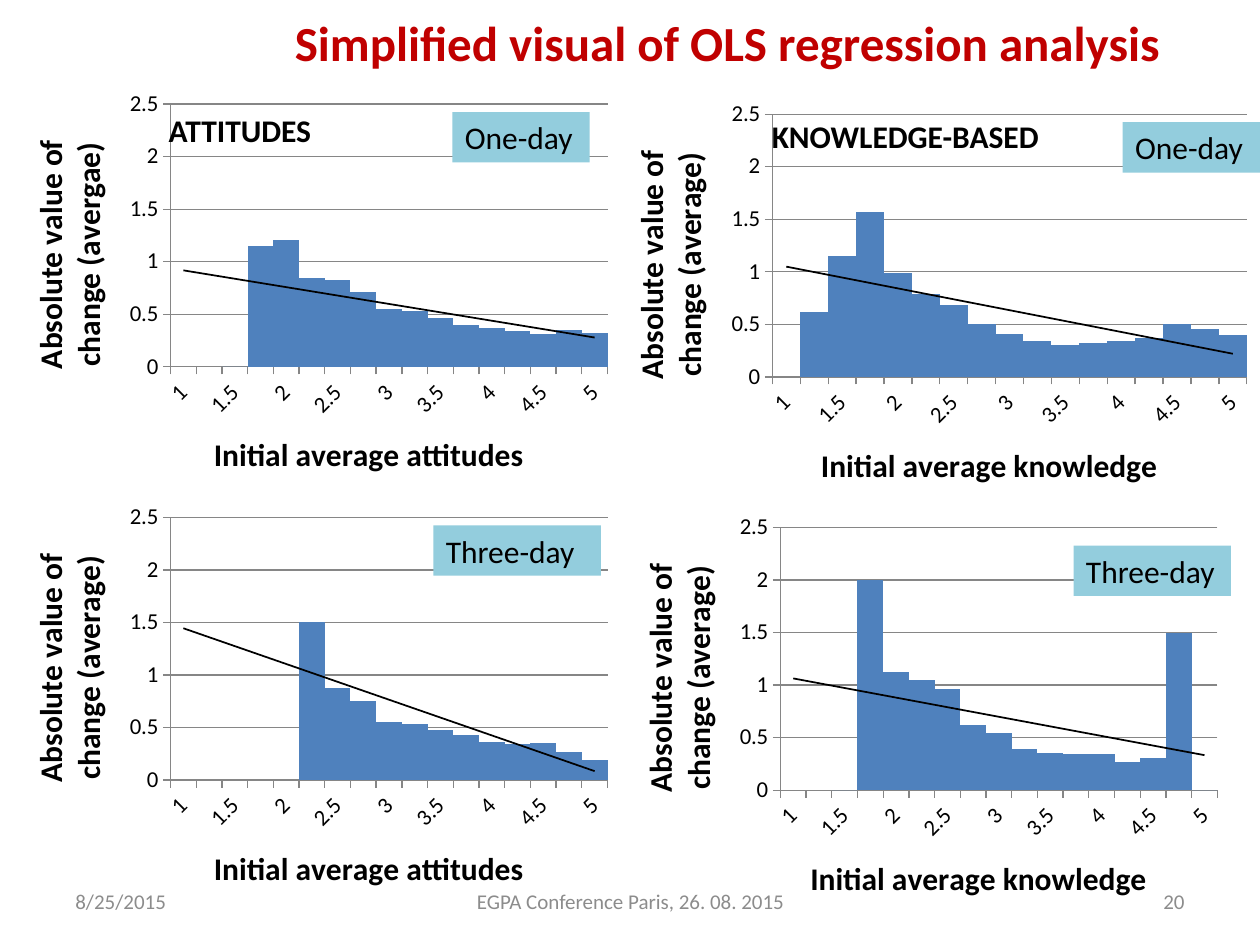
"""Build the slide comparing change by initial score across four trendline charts."""
from typing import NamedTuple, Optional

from lxml.etree import SubElement
from pptx import Presentation
from pptx.chart.data import CategoryChartData
from pptx.dml.color import RGBColor
from pptx.enum.chart import XL_CHART_TYPE, XL_TICK_MARK
from pptx.enum.shapes import MSO_SHAPE
from pptx.enum.text import MSO_ANCHOR, MSO_AUTO_SIZE, PP_ALIGN
from pptx.oxml import parse_xml
from pptx.oxml.ns import nsdecls, qn
from pptx.util import Inches, Pt

FONT = "Calibri"
COLORS = {"title": "C00000", "text": "000000", "bar": "4F81BD", "grid": "868686",
          "tag": "93CDDD", "footer": "8C8C8C"}
SCORES = [f"{1 + step / 4:g}" for step in range(17)]


class Box(NamedTuple):
    left: float
    top: float
    width: float
    height: float

    def emu(self) -> list:
        return [Inches(length) for length in self]


class Panel(NamedTuple):
    box: Box
    subject: str
    average: str
    changes: list
    tag: str
    tag_box: Box


class Label(NamedTuple):
    text: str
    box: Box
    align: Optional[PP_ALIGN]
    size: int = 18
    color: str = "text"
    bold: bool = False


PANELS = [
    Panel(Box(0, 0.65, 4.92, 3.36), "attitudes", "avergae",
          [None, None, 0, 1.15, 1.21, 0.85, 0.83, 0.71, 0.55, 0.53, 0.46, 0.4,
           0.37, 0.34, 0.31, 0.35, 0.32], "One-day", Box(3.59, 0.89, 1.09, 0.4)),
    Panel(Box(4.77, 0.73, 5.23, 3.36), "knowledge", "average",
          [None, 0.62, 1.15, 1.57, 0.99, 0.79, 0.68, 0.5, 0.41, 0.34, 0.3, 0.32,
           0.34, 0.37, 0.5, 0.46, 0.4], "One-day", Box(8.91, 0.97, 1.09, 0.4)),
    Panel(Box(0, 3.93, 4.92, 3.36), "attitudes", "average",
          [None] * 5 + [1.5, 0.88, 0.75, 0.55, 0.53, 0.48, 0.43, 0.36, 0.34,
                        0.35, 0.27, 0.19], "Three-day", Box(3.44, 4.17, 1.33, 0.4)),
    Panel(Box(4.84, 4.01, 4.92, 3.36), "knowledge", "average",
          [None, None, 0, 2, 1.12, 1.05, 0.96, 0.62, 0.54, 0.39, 0.35, 0.34,
           0.34, 0.27, 0.31, 1.5, 0], "Three-day", Box(8.52, 4.33, 1.25, 0.4)),
]
HEADINGS = [
    Label("ATTITUDES", Box(-0.01, 0.83, 3.83, 0.4), PP_ALIGN.CENTER, bold=True),
    Label("KNOWLEDGE-BASED", Box(5.27, 0.88, 3.83, 0.4), PP_ALIGN.CENTER, bold=True),
]
FOOTERS = [
    Label("8/25/2015", Box(0.5, 6.95, 2.33, 0.4), PP_ALIGN.LEFT, 12, "footer"),
    Label("EGPA Conference Paris, 26. 08. 2015", Box(3.42, 6.95, 3.17, 0.4),
          PP_ALIGN.CENTER, 12, "footer"),
    Label("20", Box(7.17, 6.95, 2.33, 0.4), PP_ALIGN.RIGHT, 12, "footer"),
]


def rgb(name: str) -> RGBColor:
    return RGBColor.from_string(COLORS[name])


def style_font(font, size: int, color: str = "text", bold: bool = False) -> None:
    font.name, font.size, font.bold = FONT, Pt(size), bold
    font.color.rgb = rgb(color)


def write(shape, label: Label, anchor=MSO_ANCHOR.TOP, wrap: bool = True) -> None:
    frame = shape.text_frame
    frame.text = label.text
    frame.word_wrap = wrap
    frame.vertical_anchor = anchor
    grows = anchor == MSO_ANCHOR.TOP
    frame.auto_size = MSO_AUTO_SIZE.SHAPE_TO_FIT_TEXT if grows else MSO_AUTO_SIZE.NONE
    paragraph = frame.paragraphs[0]
    paragraph.alignment = label.align
    style_font(paragraph.runs[0].font, label.size, label.color, label.bold)


def style_axis(axis, title: str) -> None:
    axis.has_title = True
    axis.axis_title.text_frame.text = title
    run = axis.axis_title.text_frame.paragraphs[0].runs[0]
    style_font(run.font, 18, bold=True)
    style_font(axis.tick_labels.font, 13)
    axis.major_tick_mark = XL_TICK_MARK.OUTSIDE
    axis.minor_tick_mark = XL_TICK_MARK.NONE
    axis.format.line.color.rgb = rgb("grid")


def add_trend(series) -> None:
    trend = parse_xml(
        f'<c:trendline {nsdecls("c", "a")}><c:spPr><a:ln w="12700"><a:solidFill>'
        f'<a:srgbClr val="{COLORS["text"]}"/></a:solidFill></a:ln></c:spPr>'
        '<c:trendlineType val="linear"/><c:dispRSqr val="0"/><c:dispEq val="0"/>'
        '</c:trendline>')
    series._element.find(qn("c:cat")).addprevious(trend)


def add_panel_chart(slide, panel: Panel) -> None:
    data = CategoryChartData()
    data.categories = SCORES
    data.add_series("Series 1", panel.changes)
    chart = slide.shapes.add_chart(
        XL_CHART_TYPE.COLUMN_CLUSTERED, *panel.box.emu(), data).chart
    style_font(chart.font, 18)
    chart.has_title = chart.has_legend = False
    plot = chart.plots[0]
    plot.gap_width = 0
    plot.vary_by_categories = False
    bars = plot.series[0]
    bars.format.fill.solid()
    bars.format.fill.fore_color.rgb = rgb("bar")
    add_trend(bars)
    style_axis(chart.category_axis, f"Initial average {panel.subject}")
    labels = chart.category_axis._element.find(qn("c:txPr"))
    labels.find(qn("a:bodyPr")).set("rot", "-2700000")
    values = chart.value_axis
    style_axis(values, f"Absolute value of change ({panel.average})")
    title_body = values.axis_title.text_frame._txBody.find(qn("a:bodyPr"))
    title_body.set("rot", "-5400000")
    title_body.set("vert", "horz")
    values.minimum_scale, values.maximum_scale, values.major_unit = 0, 2.5, 0.5
    values.tick_labels.number_format = "General"
    values.tick_labels.number_format_is_linked = False
    values.has_major_gridlines = True
    values.major_gridlines.format.line.color.rgb = rgb("grid")


def add_tag(slide, panel: Panel) -> None:
    tag = slide.shapes.add_shape(MSO_SHAPE.RECTANGLE, *panel.tag_box.emu())
    tag.shadow.inherit = False
    tag.fill.solid()
    tag.fill.fore_color.rgb = rgb("tag")
    tag.line.fill.background()
    write(tag, Label(panel.tag, panel.tag_box, PP_ALIGN.LEFT))


def add_label(slide, label: Label, anchor=MSO_ANCHOR.TOP) -> None:
    write(slide.shapes.add_textbox(*label.box.emu()), label, anchor)


def place_title(slide) -> None:
    title = slide.shapes.title
    label = Label("Simplified visual of OLS regression analysis",
                  Box(2.24, 0.05, 7.15, 0.57), PP_ALIGN.LEFT, 28, "title", True)
    title.left, title.top, title.width, title.height = label.box.emu()
    write(title, label, wrap=False)


def main() -> None:
    deck = Presentation()
    deck.slide_width, deck.slide_height = Inches(10), Inches(7.5)
    slide = deck.slides.add_slide(deck.slide_layouts[5])
    place_title(slide)
    for panel in PANELS:
        add_panel_chart(slide, panel)
    for heading in HEADINGS:
        add_label(slide, heading)
    for panel in PANELS:
        add_tag(slide, panel)
    for footer in FOOTERS:
        add_label(slide, footer, MSO_ANCHOR.MIDDLE)
    deck.save("out.pptx")


if __name__ == "__main__":
    main()
